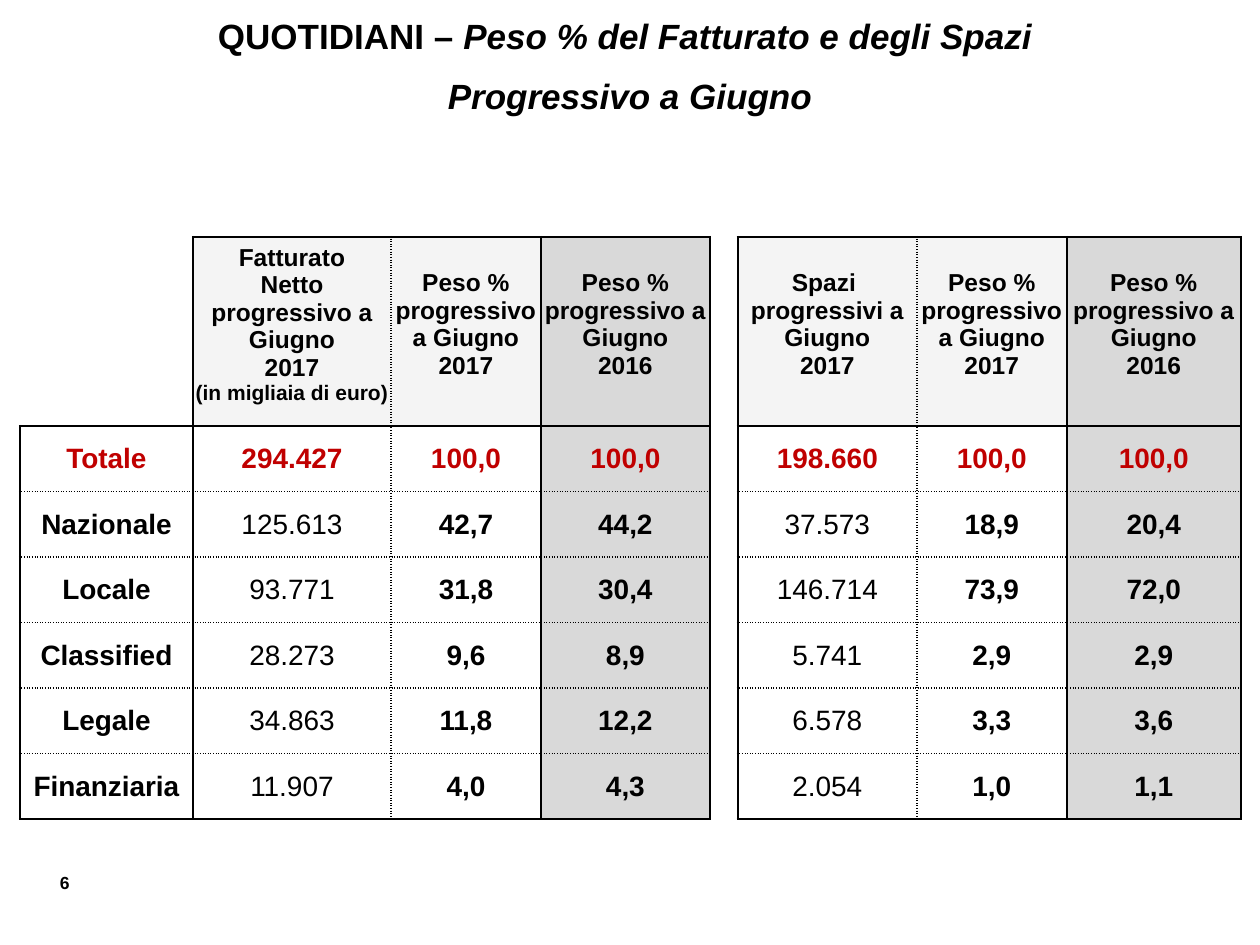
from lxml import etree
from pptx import Presentation
from pptx.dml.color import RGBColor
from pptx.enum.text import MSO_ANCHOR, PP_ALIGN
from pptx.oxml.ns import qn
from pptx.util import Emu, Pt

CENTER, RIGHT = PP_ALIGN.CENTER, PP_ALIGN.RIGHT
TOP, MIDDLE = MSO_ANCHOR.TOP, MSO_ANCHOR.MIDDLE
BLACK = RGBColor(0x00, 0x00, 0x00)
RED = RGBColor(0xC0, 0x00, 0x00)
PALE_GRAY = RGBColor(0xF2, 0xF2, 0xF2)
MID_GRAY = RGBColor(0xD9, 0xD9, 0xD9)
PX = 914400 / 126
NO_STYLE = "{2D5ABB26-0587-4C30-8999-92F81FD0307C}"

# Border kinds: width in points and dash
THICK, THIN, DOTTED = (1.5, "solid"), (1, "solid"), (1, "sysDot")


def add_span(para, text, color=BLACK, **values):
    span = para.add_run()
    span.text = text
    for name, value in {"name": "Arial", "bold": True, **values}.items():
        setattr(span.font, name, value)
    span.font.color.rgb = color


def set_borders(cell, sides):
    """Put the four borders, in schema order, ahead of the cell's fill."""
    properties = cell._tc.get_or_add_tcPr()
    for position, (side, border) in enumerate(zip("LRTB", sides)):
        line = etree.Element(qn(f"a:ln{side}"))
        if border:
            width, dash = border
            line.set("w", str(Pt(width)))
            fill = etree.SubElement(line, qn("a:solidFill"))
            etree.SubElement(fill, qn("a:srgbClr"), val=str(BLACK))
            etree.SubElement(line, qn("a:prstDash"), val=dash)
        else:
            etree.SubElement(line, qn("a:noFill"))
        properties.insert(position, line)


deck = Presentation()
deck.slide_width, deck.slide_height = Emu(round(1260 * PX)), Emu(round(945 * PX))
page = deck.slides.add_slide(deck.slide_layouts[5])

# Title
title = page.shapes.title
for name, value in {"left": 0, "top": 8, "width": 1260, "height": 118}.items():
    setattr(title, name, Emu(round(value * PX)))
title.text_frame.vertical_anchor = TOP
para = title.text_frame.paragraphs[0]
para.alignment = CENTER
add_span(para, "QUOTIDIANI – ", size=Pt(20))
add_span(para, "Peso % del Fatturato e degli Spazi ", size=Pt(20), italic=True)
para = title.text_frame.add_paragraph()
para.alignment = CENTER
para.space_before = Pt(10.5)
add_span(para, "Progressivo a Giugno", size=Pt(20), italic=True)

# Table: two blocks of three columns, parted by an empty column
WIDTHS = [173, 198, 150, 169, 28, 179, 150, 174]
HEADER_HEIGHT, BODY_HEIGHT = 189, 393
GAP_COLUMN = 4
AMOUNT_COLUMNS, SHADED_COLUMNS = (1, 5), (3, 7)
WEIGHT = "Peso % progressivo a Giugno"
HEADERS = [
    [], ["Fatturato", "Netto progressivo a Giugno", "2017"],
    [WEIGHT, "2017"], [WEIGHT, "2016"], [],
    ["Spazi ", "progressivi a Giugno", "2017"],
    [WEIGHT, "2017"], [WEIGHT, "2016"],
]
BODY = [
    ["Totale", "294.427", "100,0", "100,0", "", "198.660", "100,0", "100,0"],
    ["Nazionale", "125.613", "42,7", "44,2", "", "37.573", "18,9", "20,4"],
    ["Locale", "93.771", "31,8", "30,4", "", "146.714", "73,9", "72,0"],
    ["Classified", "28.273", "9,6", "8,9", "", "5.741", "2,9", "2,9"],
    ["Legale", "34.863", "11,8", "12,2", "", "6.578", "3,3", "3,6"],
    ["Finanziaria", "11.907", "4,0", "4,3", "", "2.054", "1,0", "1,1"],
]
ROWS = [HEADERS] + [[[text] if text else [] for text in row] for row in BODY]
COLUMN_EDGES = [THICK, THICK, DOTTED, THIN, THICK, THICK, DOTTED, THIN, THICK]
ROW_EDGES = [THICK, THICK] + [DOTTED] * (len(BODY) - 1) + [THICK]

frame = page.shapes.add_table(
    len(ROWS), len(WIDTHS), Emu(round(20 * PX)), Emu(round(237 * PX)),
    Emu(round(sum(WIDTHS) * PX)), Emu(round((HEADER_HEIGHT + BODY_HEIGHT) * PX)))
table = frame.table
table.first_row = table.horz_banding = False
table._tbl.tblPr.find(qn("a:tableStyleId")).text = NO_STYLE
for column, width in zip(table.columns, WIDTHS):
    column.width = Emu(round(width * PX))
for index, row in enumerate(table.rows):
    height = BODY_HEIGHT / len(BODY) if index else HEADER_HEIGHT
    row.height = Emu(round(height * PX))

for r, row in enumerate(ROWS):
    for c, lines in enumerate(row):
        cell = table.cell(r, c)
        cell.vertical_anchor = MIDDLE
        margins = {"left": 1, "top": 1, "right": 1, "bottom": 0 if r else 15}
        for side, value in margins.items():
            setattr(cell, f"margin_{side}", Emu(round(value * PX)))

        for index, text in enumerate(lines):
            frame = cell.text_frame
            para = frame.add_paragraph() if index else frame.paragraphs[0]
            para.alignment = CENTER
            add_span(para, text, RED if r == 1 else BLACK,
                     size=Pt(16 if r else 14),
                     bold=r < 2 or c not in AMOUNT_COLUMNS)
        if (r, c) == (0, 1):
            para.add_line_break()
            add_span(para, "(in migliaia di euro)", size=Pt(12))

        if c in SHADED_COLUMNS:
            cell.fill.solid()
            cell.fill.fore_color.rgb = MID_GRAY
        elif r == 0 and lines:
            cell.fill.solid()
            cell.fill.fore_color.rgb = PALE_GRAY
            color = cell._tc.tcPr.find(".//" + qn("a:srgbClr"))
            etree.SubElement(color, qn("a:alpha"), val="80000")
        else:
            cell.fill.background()

        corner = (r, c) == (0, 0)
        set_borders(cell, [
            None if corner else COLUMN_EDGES[c],
            COLUMN_EDGES[c + 1],
            None if corner or c == GAP_COLUMN else ROW_EDGES[r],
            None if c == GAP_COLUMN else ROW_EDGES[r + 1],
        ])

# Page number
box = page.shapes.add_textbox(*(Emu(round(v * PX)) for v in (24, 866, 58, 34)))
box.text_frame.word_wrap = True
para = box.text_frame.paragraphs[0]
para.alignment = RIGHT
add_span(para, "6", size=Pt(10))

deck.save("out.pptx")
